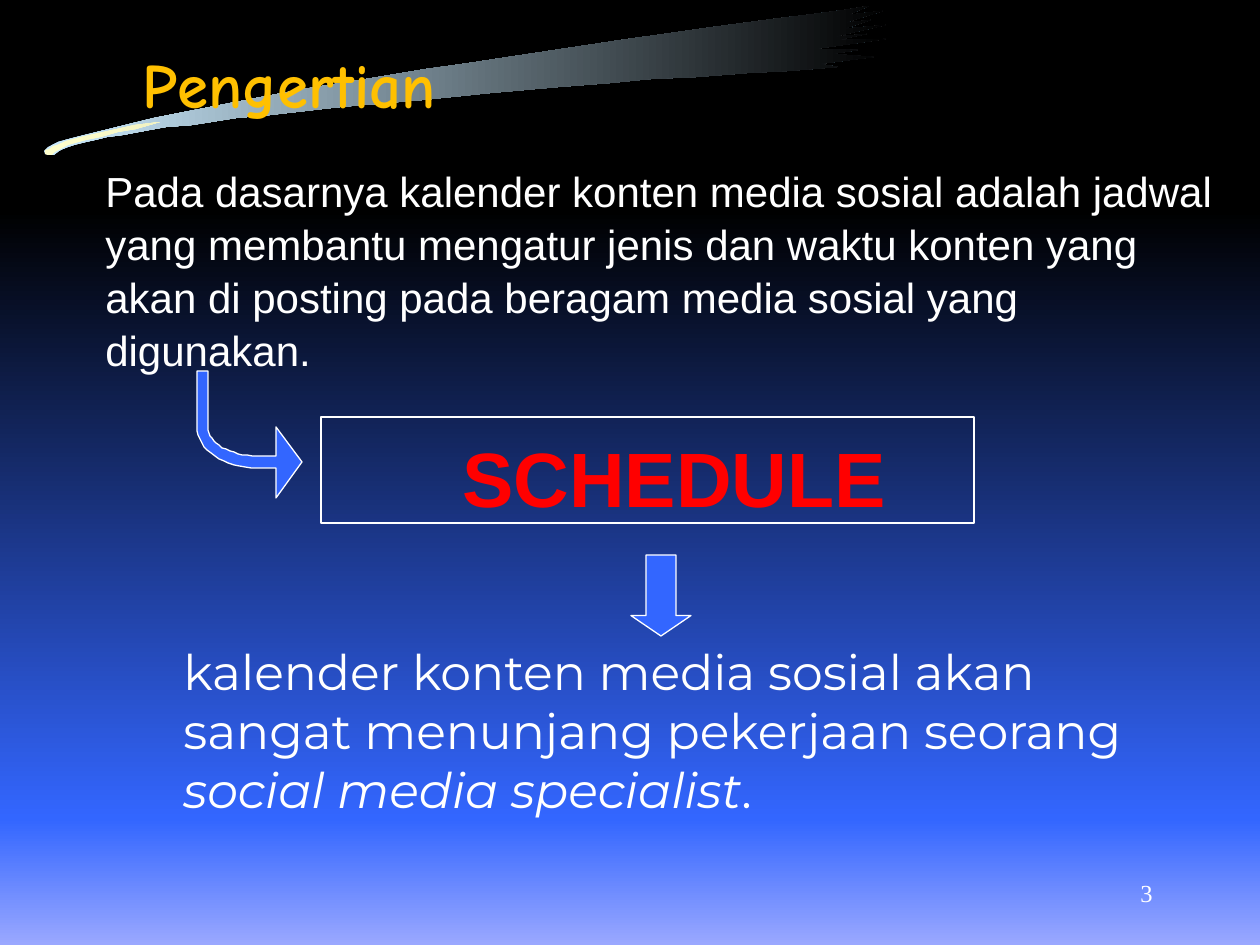
from dataclasses import dataclass

from lxml.etree import SubElement
from pptx import Presentation
from pptx.dml.color import RGBColor
from pptx.enum.shapes import MSO_SHAPE
from pptx.enum.text import MSO_ANCHOR, MSO_AUTO_SIZE, PP_ALIGN
from pptx.oxml.ns import qn
from pptx.util import Pt

PX = 914400 // 126
COLORS = {
    "black": "000000", "blue": "3366FF", "periwinkle": "9AA8FF",
    "ice": "CCECFF", "cream": "FFFFCC", "straw": "F3F3C3",
    "white": "FFFFFF", "gold": "FFC000", "navy": "000080", "red": "FF0000",
}


@dataclass
class Box:
    left: int
    top: int
    width: int
    height: int

    def emu(self) -> list[int]:
        return [side * PX for side in (self.left, self.top, self.width, self.height)]


@dataclass
class Span:
    text: str
    size: int
    font: str
    color: str
    bold: bool = False
    italic: bool = False


@dataclass
class Block:
    box: Box
    spans: list[Span]
    indent: int = 0
    inset_top: int = 6
    line_spacing: float = 1.0
    align: PP_ALIGN = PP_ALIGN.LEFT
    anchor: MSO_ANCHOR = MSO_ANCHOR.TOP


def rgb(name: str) -> RGBColor:
    return RGBColor.from_string(COLORS[name])


def paint(shape, fill: str | None, line: str | None = None) -> None:
    shape.shadow.inherit = False
    if fill:
        shape.fill.solid()
        shape.fill.fore_color.rgb = rgb(fill)
    else:
        shape.fill.background()
    if line:
        shape.line.color.rgb = rgb(line)
        shape.line.width = Pt(0.75)
    else:
        shape.line.fill.background()


def paint_gradient(shape, start: str, end: str, angle: int) -> None:
    paint(shape, start)
    shape.fill.gradient()
    shape.fill.gradient_angle = angle
    for stop, color in zip(shape.fill.gradient_stops, (start, end)):
        stop.color.rgb = rgb(color)


def draw_outline(page, points: list[tuple[int, int]]):
    builder = page.shapes.build_freeform(*points[0], scale=PX)
    builder.add_line_segments(points[1:], close=True)
    return builder.convert_to_shape()


def curve(start, first, second, end, steps: int = 16) -> list[tuple[int, int]]:
    """Points along a cubic curve, without its start."""
    points = []
    for step in range(1, steps + 1):
        t = step / steps
        weights = ((1 - t) ** 3, 3 * t * (1 - t) ** 2, 3 * t * t * (1 - t), t ** 3)
        corners = (start, first, second, end)
        points.append(tuple(round(sum(w * corner[axis] for w, corner in zip(weights, corners)), 2)
                            for axis in (0, 1)))
    return points


def write(shape, block: Block) -> None:
    shape.left, shape.top, shape.width, shape.height = block.box.emu()
    frame = shape.text_frame
    frame.word_wrap = True
    frame.auto_size = MSO_AUTO_SIZE.NONE
    frame.vertical_anchor = block.anchor
    frame.margin_top = block.inset_top * PX
    para = frame.paragraphs[0]
    para.alignment = block.align
    para.line_spacing = block.line_spacing
    para._p.get_or_add_pPr().set("marL", str(block.indent * PX))
    for item in block.spans:
        span = para.add_run()
        span.text = item.text
        font = span.font
        font.size, font.name = Pt(item.size), item.font
        font.bold, font.italic = item.bold, item.italic
        font.color.rgb = rgb(item.color)


def outline_text(span, color: str, width: float) -> None:
    properties = span.font._element
    line = SubElement(properties, qn("a:ln"), w=str(Pt(width)))
    fill = SubElement(line, qn("a:solidFill"))
    SubElement(fill, qn("a:srgbClr"), val=COLORS[color])
    properties.insert(0, line)


BRUSH = [
    (838, 67), (819, 64), (874, 57), (832, 54), (858, 50), (815, 49), (886, 39), (837, 40),
    (867, 34), (833, 37), (886, 25), (843, 29), (871, 20), (844, 23), (883, 11), (848, 15),
    (869, 6), (845, 10), (815, 14), (774, 19), (707, 28), (665, 34), (622, 40), (536, 53),
    (496, 59), (470, 63), (427, 69), (373, 78), (304, 89), (262, 97), (190, 111), (154, 118),
    (89, 134), (69, 139), (58, 142), (48, 147), (45, 150), (44, 151), (45, 154), (48, 155),
    (54, 155), (59, 151), (63, 149), (68, 147), (74, 145), (86, 142), (95, 140), (107, 137),
    (123, 135), (144, 131), (166, 127), (192, 125), (236, 118), (270, 115), (340, 107),
    (422, 100), (490, 93), (558, 87), (610, 83), (651, 79), (697, 77), (748, 73), (788, 71),
]
BRUSH_TIP = [
    (45, 150), (49, 149), (53, 146), (57, 145), (66, 141), (81, 137), (108, 131), (135, 125),
    (160, 122), (136, 129), (118, 132), (101, 137), (86, 140), (68, 145), (59, 150), (55, 152),
    (52, 155), (48, 155), (45, 154), (45, 152),
]
BENT_ARROW = [
    (302, 462), (276, 498), (276, 468), (257, 468),
    *curve((257, 468), (224, 468), (197, 450), (197, 427)),
    (197, 371), (208, 371), (208, 427),
    *curve((208, 427), (208, 443), (230, 456), (257, 456)),
    (276, 456), (276, 427),
]

TITLE = Block(Box(105, 40, 369, 86), [Span("Pengertian", 36, "Comic Neue", "gold", bold=True)],
              align=PP_ALIGN.CENTER)
DEFINITION = Block(
    Box(15, 155, 1212, 217),
    [Span("Pada dasarnya kalender konten media sosial adalah jadwal yang membantu mengatur "
          "jenis dan waktu konten yang akan di posting pada beragam media sosial yang digunakan.",
          24, "Arial", "white")],
    indent=78, inset_top=8, line_spacing=1.05)
BENEFIT = Block(
    Box(100, 636, 1110, 190),
    [Span("kalender konten media sosial akan sangat menunjang pekerjaan seorang",
          28, "Montserrat", "white"),
     Span(" social media specialist", 28, "Montserrat", "white", italic=True),
     Span(".", 28, "Montserrat", "white")],
    indent=71)
PAGE_NUMBER = Block(Box(903, 861, 262, 63), [Span("3", 14, "Times New Roman", "white")],
                    align=PP_ALIGN.RIGHT, anchor=MSO_ANCHOR.MIDDLE)
SCHEDULE = Block(Box(321, 417, 653, 106), [Span("SCHEDULE", 44, "Arial", "red", bold=True)],
                 indent=129, inset_top=9, line_spacing=1.05)


def main() -> None:
    deck = Presentation()
    deck.slide_width, deck.slide_height = 1260 * PX, 945 * PX
    page = deck.slides.add_slide(deck.slide_layouts[5])
    shapes = page.shapes

    # Background: black fading to blue, with a brush stroke
    page.background.fill.solid()
    page.background.fill.fore_color.rgb = rgb("black")
    for band, start, end in ((Box(0, 210, 1260, 609), "black", "blue"),
                             (Box(0, 819, 1260, 126), "blue", "periwinkle")):
        shape = shapes.add_shape(MSO_SHAPE.RECTANGLE, *band.emu())
        paint_gradient(shape, start, end, 270)
    paint_gradient(draw_outline(page, BRUSH), "ice", "black", 0)
    paint_gradient(draw_outline(page, BRUSH_TIP), "cream", "straw", 0)

    # Title, brought in front of the brush stroke
    title = shapes.title
    write(title, TITLE)
    outline_text(title.text_frame.paragraphs[0].runs[0], "navy", 1.5)
    shapes._spTree.append(title._element)

    # Texts
    for block in (PAGE_NUMBER, DEFINITION, BENEFIT):
        write(shapes.add_textbox(*block.box.emu()), block)

    # Schedule box and the arrows around it
    paint(draw_outline(page, BENT_ARROW), "blue", "white")
    schedule = shapes.add_shape(MSO_SHAPE.RECTANGLE, *SCHEDULE.box.emu())
    paint(schedule, None, "white")
    write(schedule, SCHEDULE)
    down_arrow = shapes.add_shape(MSO_SHAPE.DOWN_ARROW, *Box(631, 555, 60, 81).emu())
    down_arrow.adjustments[0], down_arrow.adjustments[1] = 0.5, 0.34
    paint(down_arrow, "blue", "white")

    deck.save("out.pptx")


if __name__ == "__main__":
    main()
